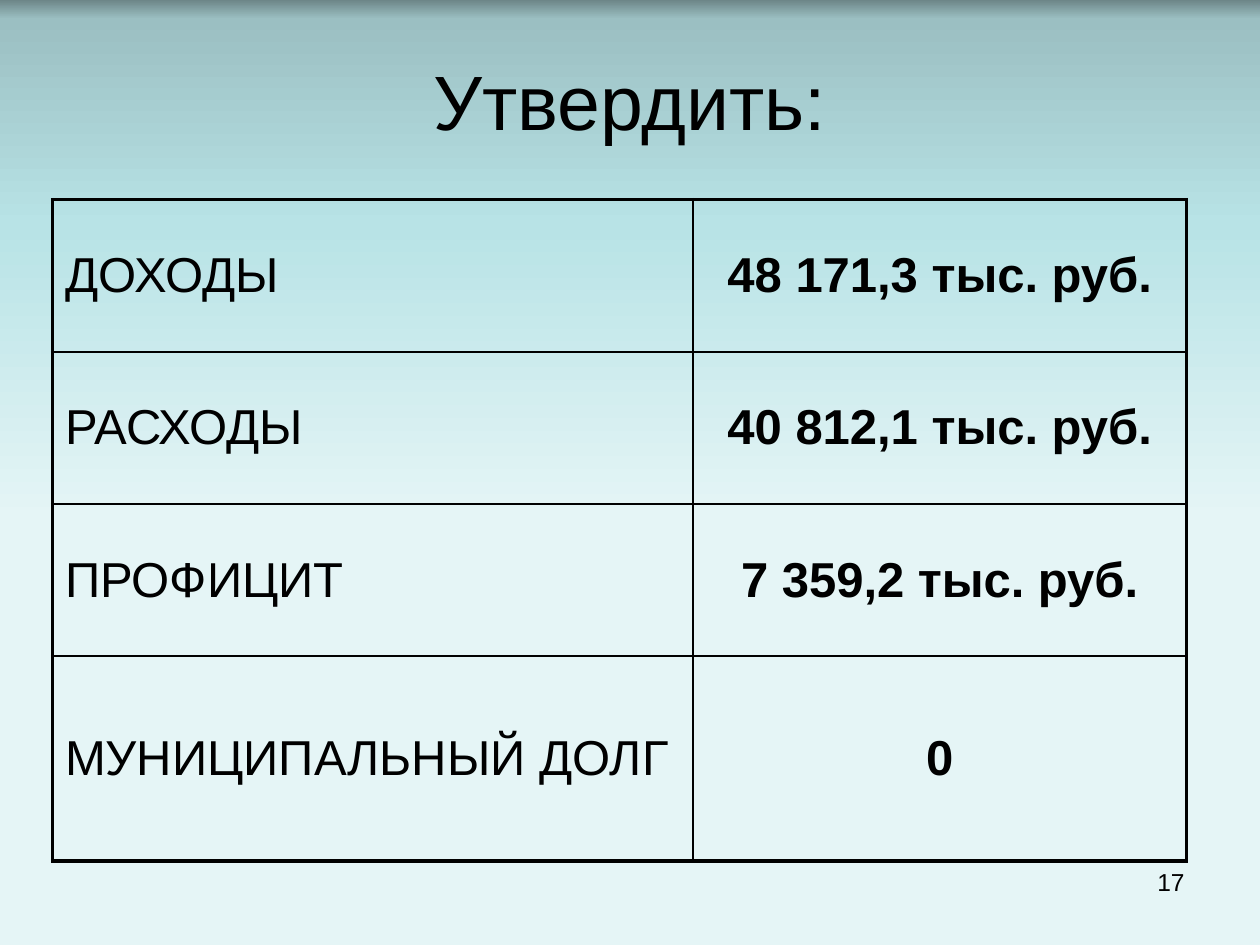
from lxml.etree import SubElement
from pptx import Presentation
from pptx.dml.color import RGBColor
from pptx.enum.text import MSO_ANCHOR, PP_ALIGN
from pptx.oxml.ns import qn
from pptx.util import Pt

COLORS = {
    "text": "000000",
    "border": "000000",
    "sky_top": "6D8688",
    "sky_upper": "9BBFC2",
    "sky_middle": "B8E3E6",
    "sky_bottom": "E5F5F6",
}
FONT = "Arial"
GRADIENT = [(0, "sky_top"), (2, "sky_upper"), (24, "sky_middle"), (55, "sky_bottom")]
BUDGET = [
    ("ДОХОДЫ", "48 171,3 тыс. руб."),
    ("РАСХОДЫ", "40 812,1 тыс. руб."),
    ("ПРОФИЦИТ", "7 359,2 тыс. руб."),
    ("МУНИЦИПАЛЬНЫЙ ДОЛГ", "0"),
]
COLUMN_WIDTHS = [366, 282]
ROW_HEIGHTS = [87, 87, 87, 117]
OUTER_LINE, INNER_LINE = 2.25, 1


def paint_background(slide):
    fill = slide.background.fill
    fill.gradient()
    fill.gradient_angle = 270
    stops = slide.element.find(".//" + qn("a:gsLst"))
    for stop in list(stops):
        stops.remove(stop)
    for percent, name in GRADIENT:
        stop = SubElement(stops, qn("a:gs"), pos=str(percent * 1000))
        SubElement(stop, qn("a:srgbClr"), val=COLORS[name])


def write_text(frame, text, size, align, bold=False):
    para = frame.paragraphs[0]
    para.alignment = align
    span = para.add_run()
    span.text = text
    span.font.name = FONT
    span.font.size = Pt(size)
    span.font.bold = bold
    span.font.color.rgb = RGBColor.from_string(COLORS["text"])
    return para


def add_text_box(slide, left, top, width, height, text, size, align, anchor):
    box = slide.shapes.add_textbox(Pt(left), Pt(top), Pt(width), Pt(height))
    box.text_frame.word_wrap = True
    box.text_frame.vertical_anchor = anchor
    write_text(box.text_frame, text, size, align)


def set_borders(cell, outer_sides):
    """Draw all four borders, heavier on the table's outer sides."""
    properties = cell._tc.get_or_add_tcPr()
    for side in "LRTB":
        width = OUTER_LINE if side in outer_sides else INNER_LINE
        line = SubElement(properties, qn("a:ln" + side), w=str(Pt(width)))
        solid = SubElement(line, qn("a:solidFill"))
        SubElement(solid, qn("a:srgbClr"), val=COLORS["border"])


def add_budget_table(slide, left, top):
    frame = slide.shapes.add_table(
        len(BUDGET), len(COLUMN_WIDTHS), Pt(left), Pt(top),
        Pt(sum(COLUMN_WIDTHS)), Pt(sum(ROW_HEIGHTS)),
    )
    table = frame.table
    table.first_row = table.horz_banding = False
    for column, width in zip(table.columns, COLUMN_WIDTHS):
        column.width = Pt(width)
    for row_index, (height, texts) in enumerate(zip(ROW_HEIGHTS, BUDGET)):
        table.rows[row_index].height = Pt(height)
        for column_index, text in enumerate(texts):
            cell = table.cell(row_index, column_index)
            is_value = column_index == 1
            outer_sides = "R" if is_value else "L"
            if row_index == 0:
                outer_sides += "T"
            if row_index == len(BUDGET) - 1:
                outer_sides += "B"
            set_borders(cell, outer_sides)
            cell.fill.background()
            cell.vertical_anchor = MSO_ANCHOR.MIDDLE
            align = PP_ALIGN.CENTER if is_value else PP_ALIGN.LEFT
            para = write_text(cell.text_frame, text, 28, align, bold=is_value)
            para.space_before = Pt(5.6)


def main():
    deck = Presentation()
    deck.slide_width, deck.slide_height = Pt(720), Pt(540)
    slide = deck.slides.add_slide(deck.slide_layouts[6])
    paint_background(slide)
    add_text_box(slide, 516, 492, 168, 37.5, "17", 14, PP_ALIGN.RIGHT, MSO_ANCHOR.TOP)
    add_text_box(slide, 36, 24, 648, 66, "Утвердить:", 44, PP_ALIGN.CENTER, MSO_ANCHOR.MIDDLE)
    add_budget_table(slide, 30, 114)
    deck.save("out.pptx")


if __name__ == "__main__":
    main()
